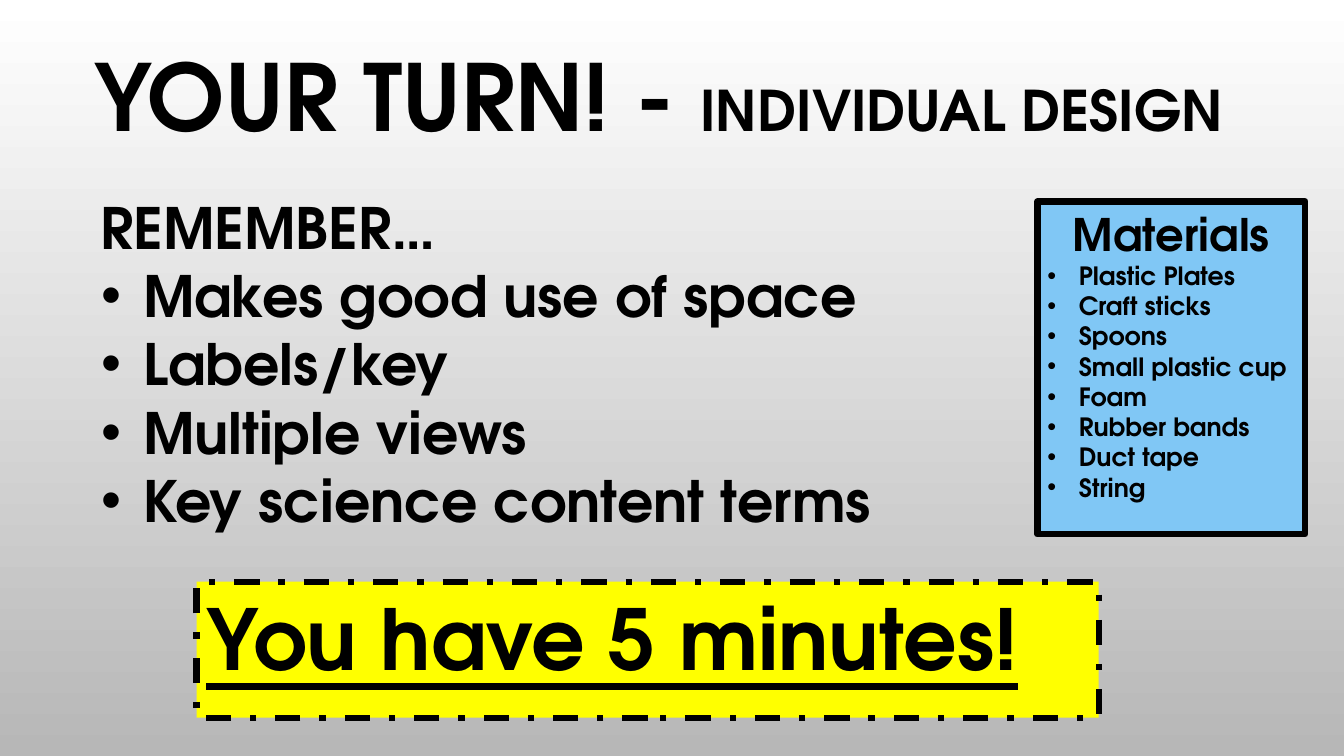
from dataclasses import dataclass

from lxml import etree
from pptx import Presentation
from pptx.dml.color import RGBColor
from pptx.enum.dml import MSO_LINE
from pptx.enum.shapes import MSO_SHAPE
from pptx.enum.text import MSO_ANCHOR, PP_ALIGN
from pptx.oxml.ns import qn
from pptx.util import Inches, Pt

RECTANGLE = MSO_SHAPE.RECTANGLE
DASH_DOT = MSO_LINE.DASH_DOT
TOP, MIDDLE = MSO_ANCHOR.TOP, MSO_ANCHOR.MIDDLE
LEFT, CENTER = PP_ALIGN.LEFT, PP_ALIGN.CENTER

SLIDE_WIDTH, SLIDE_HEIGHT = Inches(13.33), Inches(7.5)
COLUMNS, ROWS = 32, 18
BLANK_LAYOUT = 6


@dataclass(frozen=True)
class Theme:
    font: str = "TeX Gyre Adventor"
    ink: str = "000000"
    backdrop_top: str = "FFFFFF"
    backdrop_bottom: str = "B7B7B7"
    materials_fill: str = "80C7F5"
    timer_fill: str = "FFFF00"
    title_size: float = 66
    subtitle_size: float = 40
    body_size: float = 40.7
    materials_heading_size: float = 32
    materials_size: float = 18
    timer_size: float = 60
    border_width: float = 4.5


THEME = Theme()

REMINDERS = [
    "Makes good use of space",
    "Labels/key",
    "Multiple views",
    "Key science content terms",
]
MATERIALS = [
    "Plastic Plates",
    "Craft sticks",
    "Spoons",
    "Small plastic cup",
    "Foam",
    "Rubber bands",
    "Duct tape",
    "String",
]


def columns(count):
    return round(SLIDE_WIDTH * count / COLUMNS)


def rows(count):
    return round(SLIDE_HEIGHT * count / ROWS)


def grid_area(left, top, width, height):
    return columns(left), rows(top), columns(width), rows(height)


def paint_background(slide):
    fill = slide.background.fill
    fill.gradient()
    fill.gradient_angle = 270
    colors = (THEME.backdrop_top, THEME.backdrop_bottom)
    for position, (stop, color) in enumerate(zip(fill.gradient_stops, colors)):
        stop.position = position
        stop.color.rgb = RGBColor.from_string(color)


def prepare_frame(shape, anchor=TOP):
    frame = shape.text_frame
    frame.word_wrap = True
    frame.vertical_anchor = anchor
    return frame


def add_text_area(slide, area, anchor=TOP):
    return prepare_frame(slide.shapes.add_textbox(*area), anchor)


def add_panel(slide, area, fill, dash=None):
    shape = slide.shapes.add_shape(RECTANGLE, *area)
    shape.shadow.inherit = False
    shape.fill.solid()
    shape.fill.fore_color.rgb = RGBColor.from_string(fill)
    shape.line.color.rgb = RGBColor.from_string(THEME.ink)
    shape.line.width = Pt(THEME.border_width)
    if dash is not None:
        shape.line.dash_style = dash
    return prepare_frame(shape)


def add_run(paragraph, text, size, underline=None):
    run = paragraph.add_run()
    run.text = text
    font = run.font
    font.name = THEME.font
    font.size = Pt(size)
    font.bold = True
    font.underline = underline
    font.color.rgb = RGBColor.from_string(THEME.ink)


def indent(paragraph, margin, hanging=0):
    properties = paragraph._p.get_or_add_pPr()
    properties.set("marL", str(columns(margin)))
    properties.set("indent", str(-columns(hanging)))
    return properties


def add_bullets(frame, items, size, margin, hanging):
    for item in items:
        paragraph = frame.add_paragraph()
        paragraph.alignment = LEFT
        properties = indent(paragraph, margin, hanging)
        color = etree.SubElement(properties, qn("a:buClr"))
        etree.SubElement(color, qn("a:srgbClr"), val=THEME.ink)
        etree.SubElement(properties, qn("a:buFont"), typeface="Arial")
        etree.SubElement(properties, qn("a:buChar"), char="•")
        add_run(paragraph, item, size)


def add_title(slide):
    frame = add_text_area(slide, grid_area(0.77, 0.31, 29.83, 4.2), MIDDLE)
    paragraph = frame.paragraphs[0]
    paragraph.alignment = CENTER
    paragraph.line_spacing = 0.9
    add_run(paragraph, "YOUR TURN! - ", THEME.title_size)
    add_run(paragraph, "INDIVIDUAL DESIGN", THEME.subtitle_size)


def add_reminders(slide):
    frame = add_text_area(slide, grid_area(0.77, 4.46, 28.58, 8.47))
    heading = frame.paragraphs[0]
    indent(heading, 1.39)
    add_run(heading, "REMEMBER…", THEME.body_size)
    add_bullets(frame, REMINDERS, THEME.body_size, margin=2.4, hanging=1)


def add_materials(slide):
    frame = add_panel(slide, grid_area(24.7, 4.8, 6.38, 7.92), THEME.materials_fill)
    heading = frame.paragraphs[0]
    heading.alignment = CENTER
    add_run(heading, "Materials", THEME.materials_heading_size)
    add_bullets(frame, MATERIALS, THEME.materials_size, margin=0.75, hanging=0.75)


def add_timer(slide):
    area = grid_area(4.68, 13.85, 21.48, 3.24)
    frame = add_panel(slide, area, THEME.timer_fill, DASH_DOT)
    paragraph = frame.paragraphs[0]
    paragraph.alignment = LEFT
    add_run(paragraph, "You have 5 minutes!", THEME.timer_size, underline=True)


def main():
    presentation = Presentation()
    presentation.slide_width = SLIDE_WIDTH
    presentation.slide_height = SLIDE_HEIGHT
    slide = presentation.slides.add_slide(presentation.slide_layouts[BLANK_LAYOUT])
    paint_background(slide)
    add_title(slide)
    add_reminders(slide)
    add_materials(slide)
    add_timer(slide)
    presentation.save("out.pptx")


if __name__ == "__main__":
    main()
